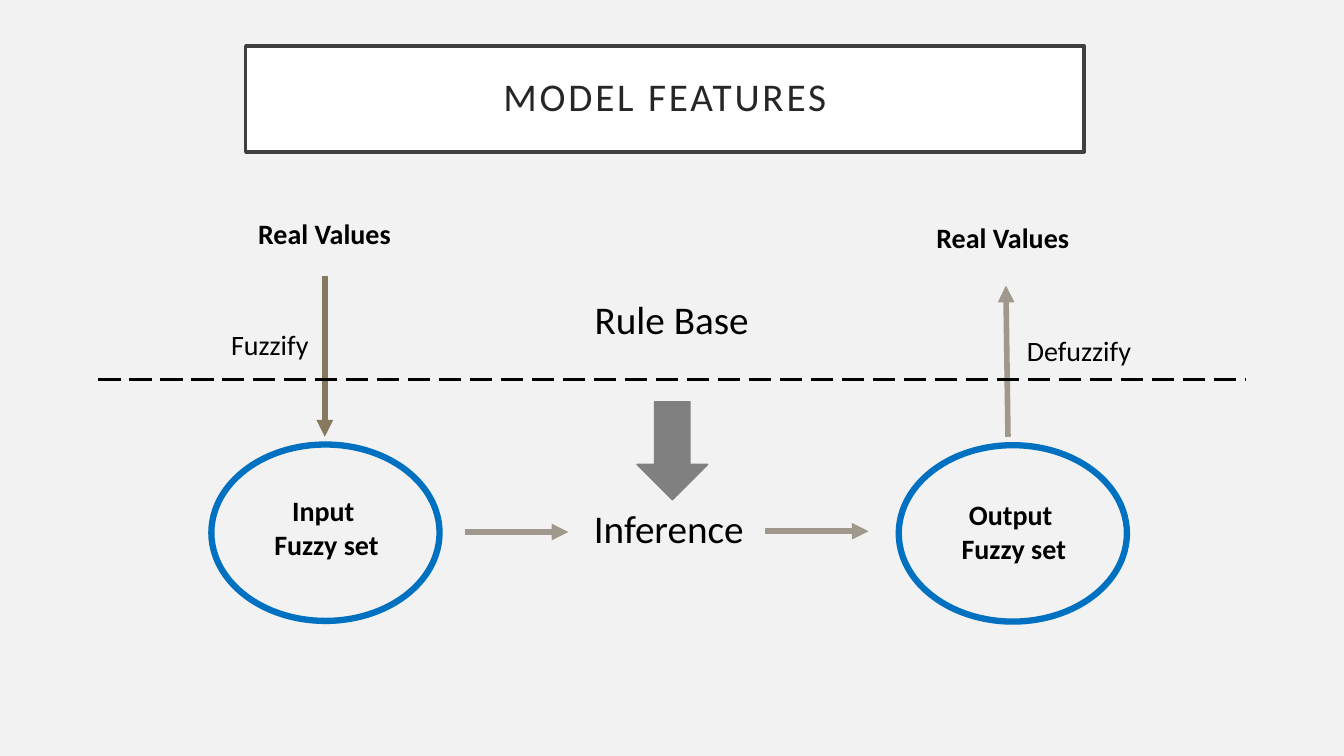
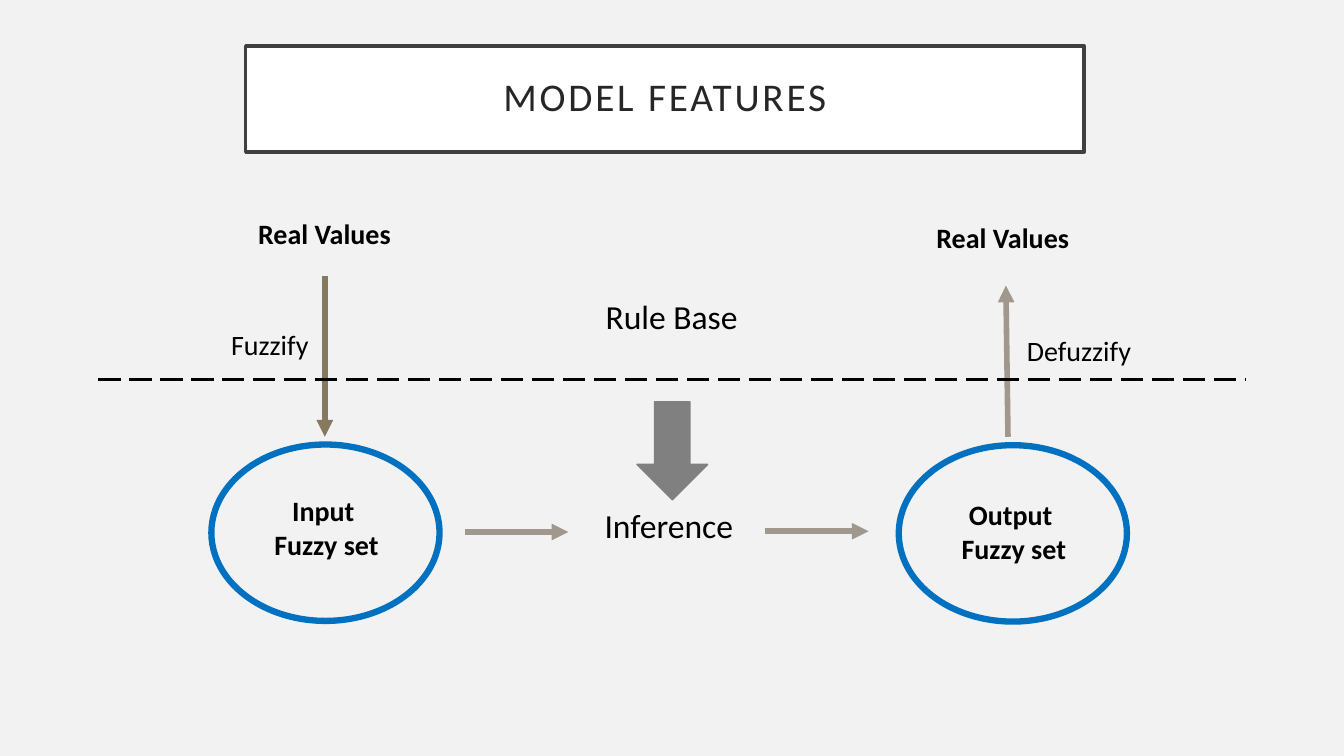
from lxml.etree import SubElement
from pptx import Presentation
from pptx.dml.color import RGBColor as Rgb
from pptx.enum.dml import MSO_LINE_DASH_STYLE as Dash
from pptx.enum.shapes import MSO_CONNECTOR as Link, MSO_SHAPE as Shape
from pptx.enum.text import MSO_ANCHOR as Anchor, MSO_AUTO_SIZE as Fit, PP_ALIGN as Align
from pptx.oxml.ns import qn
from pptx.util import Pt

HUES = {
    "page": "F2F2F2",
    "white": "FFFFFF",
    "frame": "404040",
    "title": "262626",
    "ink": "000000",
    "brown": "87795D",
    "taupe": "A0988C",
    "gray": "808080",
    "blue": "0070C0",
}


class Deck:
    face = "Calibri"
    wide = 238.5

    def __init__(self):
        self.show = Presentation()
        self.show.slide_width = Pt(960)
        self.show.slide_height = Pt(540)
        self.fill(self.show.slide_master.background, "page")
        self.slide = None

    def hue(self, name):
        return Rgb.from_string(HUES[name])

    def fill(self, item, name):
        item.fill.solid()
        item.fill.fore_color.rgb = self.hue(name)

    def edge(self, item, name, width):
        item.line.color.rgb = self.hue(name)
        item.line.width = Pt(width)

    def style(self, para, size, color="ink", bold=False):
        para.alignment = Align.CENTER
        font = para.font
        font.name, font.size, font.bold = self.face, Pt(size), bold
        font.color.rgb = self.hue(color)

    def page(self, title):
        self.slide = self.show.slides.add_slide(self.show.slide_layouts[5])
        box = self.slide.shapes.title
        box.left, box.top, box.width, box.height = map(Pt, (175.5, 33, 599, 75.5))
        self.fill(box, "white")
        self.edge(box, "frame", 2.5)
        frame = box.text_frame
        frame.text = title
        frame.word_wrap = True
        frame.auto_size = Fit.NONE
        frame.vertical_anchor = Anchor.MIDDLE
        frame.margin_left = frame.margin_right = Pt(14.4)
        frame.margin_top = frame.margin_bottom = Pt(14.4)
        para = frame.paragraphs[0]
        self.style(para, 28, "title")
        para.line_spacing = 0.9
        para.runs[0].font._element.set("spc", "200")

    def text(self, words, left, top, size=20, bold=False):
        rows = words.count("\n") + 1
        high = size * 1.2 * rows + 7.2
        box = self.slide.shapes.add_textbox(Pt(left), Pt(top), Pt(self.wide), Pt(high))
        frame = box.text_frame
        frame.word_wrap = True
        frame.auto_size = Fit.SHAPE_TO_FIT_TEXT
        frame.text = words
        for para in frame.paragraphs:
            self.style(para, size, bold=bold)

    def line(self, start, end, color, width=4, dash=None, head=True):
        link = self.slide.shapes.add_connector(Link.STRAIGHT, *map(Pt, start + end))
        self.edge(link, color, width)
        if dash:
            link.line.dash_style = dash
        props = link._element.spPr
        if head:
            SubElement(props.find(qn("a:ln")), qn("a:tailEnd"), type="triangle")
        SubElement(props, qn("a:effectLst"))

    def shape(self, kind, left, top, width, high, fill, edge, thick):
        item = self.slide.shapes.add_shape(kind, *map(Pt, (left, top, width, high)))
        item.shadow.inherit = False
        if fill:
            self.fill(item, fill)
        else:
            item.fill.background()
        self.edge(item, edge, thick)

    def ring(self, left, top):
        self.shape(Shape.OVAL, left, top, 163, 126, None, "blue", 4.5)

    def model(self, size):
        self.page("MODEL FEATURES")
        self.text("Real Values", 112.5, 151, bold=True)
        self.text("Inference", 358.5, 357, size)
        self.text("Output \nFuzzy set", 605, 352, bold=True)
        self.text("Defuzzify", 651.5, 234.5)
        self.text("Real Values", 597, 154, bold=True)
        self.text("Rule Base", 360.5, 207.5, size)
        self.text("Input \nFuzzy set", 114, 349, bold=True)
        self.text("Fuzzify", 73.5, 230.5)
        self.line((232, 197), (232, 312), "brown")
        self.line((720, 312), (718.5, 204), "taupe")
        self.shape(Shape.DOWN_ARROW, 455, 287, 50.5, 70, "gray", "gray", 1)
        self.line((332, 380), (406, 380), "taupe")
        self.line((546.5, 379.5), (620.5, 379.5), "taupe")
        self.ring(151, 317.5)
        self.line((70, 271), (890, 271), "ink", 2, Dash.LONG_DASH, False)
        self.ring(642, 318)


def main():
    deck = Deck()
    for size in (28, 24):
        deck.model(size)
    deck.show.save("out.pptx")


if __name__ == "__main__":
    main()
